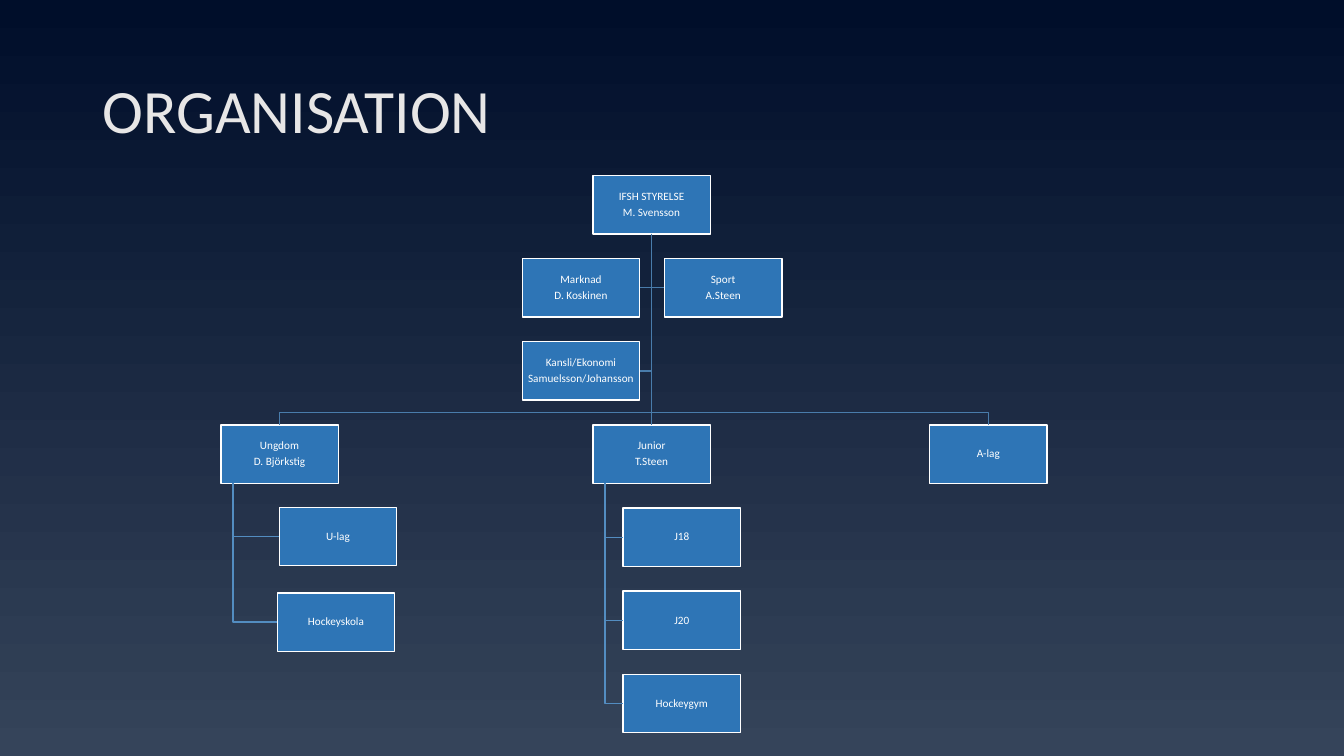
from lxml.etree import SubElement
from pptx import Presentation
from pptx.dml.color import RGBColor
from pptx.enum.shapes import MSO_CONNECTOR, MSO_SHAPE
from pptx.enum.text import MSO_ANCHOR, PP_ALIGN
from pptx.oxml.ns import qn
from pptx.util import Inches, Pt

SKY_TOP = RGBColor(0x00, 0x0E, 0x2A)
SKY_BOTTOM = RGBColor(0x35, 0x44, 0x5A)
TITLE_GREY = RGBColor(0xE7, 0xE6, 0xE6)
BOX_BLUE = RGBColor(0x2E, 0x75, 0xB6)
WHITE = RGBColor(0xFF, 0xFF, 0xFF)
TRUNK_BLUE = RGBColor(0x49, 0x7C, 0xAB)
BRANCH_BLUE = RGBColor(0x53, 0x8D, 0xC1)

FONT = "Calibri"
BOX_WIDTH, BOX_HEIGHT = Inches(1.165), Inches(0.58)
FIRST_ROW, ROW_PITCH = Inches(1.74), Inches(0.825)
GAP = Inches(0.12)

deck = Presentation()
deck.slide_width, deck.slide_height = Inches(13.33), Inches(7.5)
page = deck.slides.add_slide(deck.slide_layouts[6])

sky = page.background.fill
sky.gradient()
sky.gradient_angle = 270
for stop, colour, position in zip(sky.gradient_stops, (SKY_TOP, SKY_BOTTOM), (0, 1)):
    stop.color.rgb = colour
    stop.position = position


def add_line(para, text, size, colour):
    para.line_spacing = 0.9
    span = para.add_run()
    span.text = text
    span.font.name = FONT
    span.font.size = Pt(size)
    span.font.color.rgb = colour


def add_elbow(points, colour):
    """Draw an open line through the points."""
    builder = page.shapes.build_freeform(*points[0])
    builder.add_line_segments(points[1:], close=False)
    elbow = builder.convert_to_shape()
    elbow.shadow.inherit = False
    elbow.fill.background()
    elbow.line.color.rgb = colour
    elbow.line.width = Pt(1)


title = page.shapes.add_textbox(Inches(0.92), Inches(0.4), Inches(11.5), Inches(1.45))
title.text_frame.word_wrap = True
title.text_frame.vertical_anchor = MSO_ANCHOR.MIDDLE
add_line(title.text_frame.paragraphs[0], "ORGANISATION", 44, TITLE_GREY)

# Left edge in inches, row of the chart, lines of text
units = {
    "board": (5.88, 0, ["IFSH STYRELSE", "M. Svensson"]),
    "market": (5.18, 1, ["Marknad", "D. Koskinen"]),
    "sport": (6.59, 1, ["Sport", "A.Steen"]),
    "office": (5.18, 2, ["Kansli/Ekonomi", "Samuelsson/Johansson"]),
    "youth": (2.19, 3, ["Ungdom", "D. Björkstig"]),
    "junior": (5.88, 3, ["Junior", "T.Steen"]),
    "senior": (9.22, 3, ["A-lag"]),
    "youth team": (2.77, 3.99, ["U-lag"]),
    "hockey school": (2.75, 5.02, ["Hockeyskola"]),
    "under 18": (6.18, 4, ["J18"]),
    "under 20": (6.18, 5, ["J20"]),
    "hockey gym": (6.18, 6, ["Hockeygym"]),
}
boxes = {}
for unit, (left, row, lines) in units.items():
    top = FIRST_ROW + int(row * ROW_PITCH)
    box = page.shapes.add_shape(MSO_SHAPE.RECTANGLE, Inches(left), top, BOX_WIDTH, BOX_HEIGHT)
    box.shadow.inherit = False
    box.fill.solid()
    box.fill.fore_color.rgb = BOX_BLUE
    box.line.color.rgb = WHITE
    box.line.width = Pt(1)
    frame = box.text_frame
    frame.word_wrap = True
    frame.vertical_anchor = MSO_ANCHOR.MIDDLE
    frame.margin_left = frame.margin_right = Inches(0.01)
    frame.margin_top = frame.margin_bottom = Inches(0.01)
    for index, line in enumerate(lines):
        para = frame.add_paragraph() if index else frame.paragraphs[0]
        para.alignment = PP_ALIGN.CENTER
        para.space_after = Pt(2.8)
        add_line(para, line, 8, WHITE)
    boxes[unit] = box

board = boxes["board"]
trunk_x = board.left + BOX_WIDTH // 2
trunk_top = board.top + BOX_HEIGHT

trunk = page.shapes.add_connector(MSO_CONNECTOR.STRAIGHT, 0, 0, 0, 0)
trunk.begin_connect(board, 2)
trunk.end_connect(boxes["junior"], 0)
trunk.line.color.rgb = TRUNK_BLUE
trunk.line.width = Pt(1)
SubElement(trunk._element.spPr, qn("a:effectLst"))

for unit in ("youth", "senior"):
    box = boxes[unit]
    middle, bar_y = box.left + BOX_WIDTH // 2, box.top - GAP
    add_elbow([(trunk_x, trunk_top), (trunk_x, bar_y), (middle, bar_y), (middle, box.top)], TRUNK_BLUE)

for unit in ("market", "sport", "office"):
    box = boxes[unit]
    near_side = box.left if box.left > trunk_x else box.left + BOX_WIDTH
    middle = box.top + BOX_HEIGHT // 2
    add_elbow([(trunk_x, trunk_top), (trunk_x, middle), (near_side, middle)], TRUNK_BLUE)

teams = {
    "youth": ["youth team", "hockey school"],
    "junior": ["under 18", "under 20", "hockey gym"],
}
for parent, children in teams.items():
    spine_x = boxes[parent].left + GAP
    spine_top = boxes[parent].top + BOX_HEIGHT
    for child in children:
        box = boxes[child]
        middle = box.top + BOX_HEIGHT // 2
        add_elbow([(spine_x, spine_top), (spine_x, middle), (box.left, middle)], BRANCH_BLUE)

deck.save("out.pptx")
